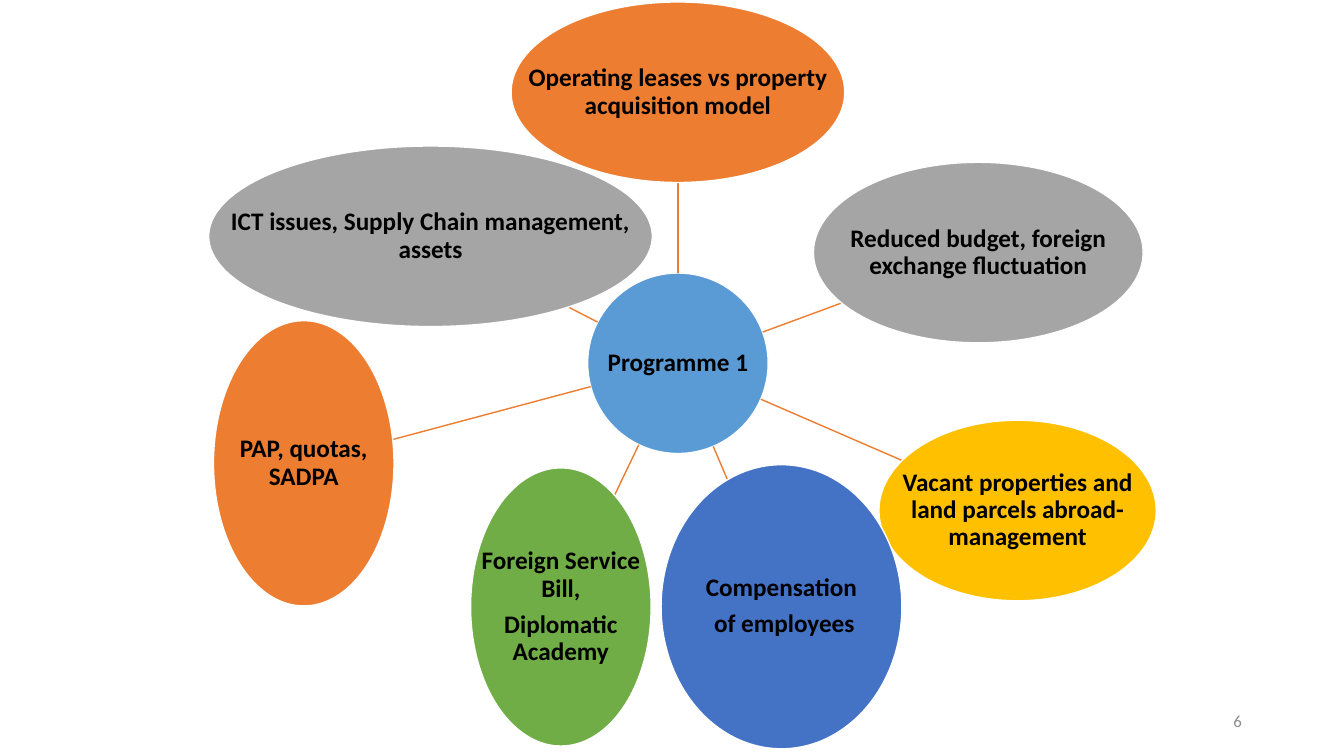
"""Build a hub-and-spoke slide of the issues around Programme 1."""
from math import hypot

from lxml.etree import SubElement
from pptx import Presentation
from pptx.dml.color import RGBColor
from pptx.enum.shapes import MSO_CONNECTOR as LINK, MSO_SHAPE as SHAPE
from pptx.enum.text import MSO_ANCHOR as ANCHOR, PP_ALIGN as ALIGN
from pptx.oxml.ns import qn
from pptx.util import Cm, Pt

programme = Presentation()
programme.slide_width, programme.slide_height = Cm(33.87), Cm(19.05)
slide = programme.slides.add_slide(programme.slide_layouts[6])


def color(hex_code):
    return RGBColor.from_string(hex_code)


def write(text, box, size=18, bold=True, ink="000000", align=ALIGN.CENTER,
          inset=0.03, spacing=0.9, after=6.3):
    frame = slide.shapes.add_textbox(*map(Cm, box)).text_frame
    frame.word_wrap = True
    frame.vertical_anchor = ANCHOR.MIDDLE
    frame.margin_left = frame.margin_right = Cm(inset)
    frame.margin_top = frame.margin_bottom = Cm(inset)
    frame.text = text
    for paragraph in frame.paragraphs:
        paragraph.alignment = align
        paragraph.line_spacing = spacing
        paragraph.space_after = Pt(after)
        font = paragraph.runs[0].font
        font.name, font.size, font.bold = "Calibri", Pt(size), bold
        font.color.rgb = color(ink)


hub_size = 4.55
hub_left, hub_top = 14.81, 6.88
hub_x, hub_y = hub_left + hub_size / 2, hub_top + hub_size / 2

topics = [
    ("Programme 1", "5B9BD5", (hub_left, hub_top, hub_size, hub_size)),
    ("Operating leases vs property acquisition model", "ED7D31",
     (12.88, 0.05, 8.41, hub_size)),
    ("Reduced budget, foreign exchange fluctuation", "A5A5A5",
     (20.5, 4.09, 8.31, hub_size)),
    ("Vacant properties and land parcels abroad- management", "FFC000",
     (22.15, 10.59, 6.99, hub_size)),
    ("Compensation\n of employees", "4472C4", (16.66, 11.71, 6.07, 7.16)),
    ("Foreign Service Bill,\nDiplomatic Academy", "70AD47",
     (11.86, 11.79, hub_size, 7.01)),
    ("PAP, quotas, SADPA", "ED7D31", (5.38, 8.08, hub_size, 7.19)),
    ("ICT issues, Supply Chain management, assets", "A5A5A5",
     (5.26, 3.68, 11.18, hub_size)),
]

for label, fill, box in topics:
    left, top, width, height = box
    dx, dy = left + width / 2 - hub_x, top + height / 2 - hub_y
    if label != "Programme 1":
        start = hub_size / 2 / hypot(dx, dy)
        end = 1 - 1 / hypot(dx / (width / 2), dy / (height / 2))
        spoke = slide.shapes.add_connector(
            LINK.STRAIGHT,
            Cm(hub_x + start * dx), Cm(hub_y + start * dy),
            Cm(hub_x + end * dx), Cm(hub_y + end * dy))
        spoke.line.color.rgb = color("ED7D31")
        spoke.line.width = Pt(1)
        SubElement(spoke._element.spPr, qn("a:effectLst"))

    bubble = slide.shapes.add_shape(SHAPE.OVAL, *map(Cm, box))
    bubble.shadow.inherit = False
    bubble.fill.solid()
    bubble.fill.fore_color.rgb = color(fill)
    bubble.line.color.rgb = color("FFFFFF")
    bubble.line.width = Pt(1)
    write(label, box)

write("6", (23.93, 17.65, 7.62, 1.02), size=12, bold=False, ink="8C8C8C",
      align=ALIGN.RIGHT, inset=0.25, spacing=1.0, after=0)

programme.save("out.pptx")
